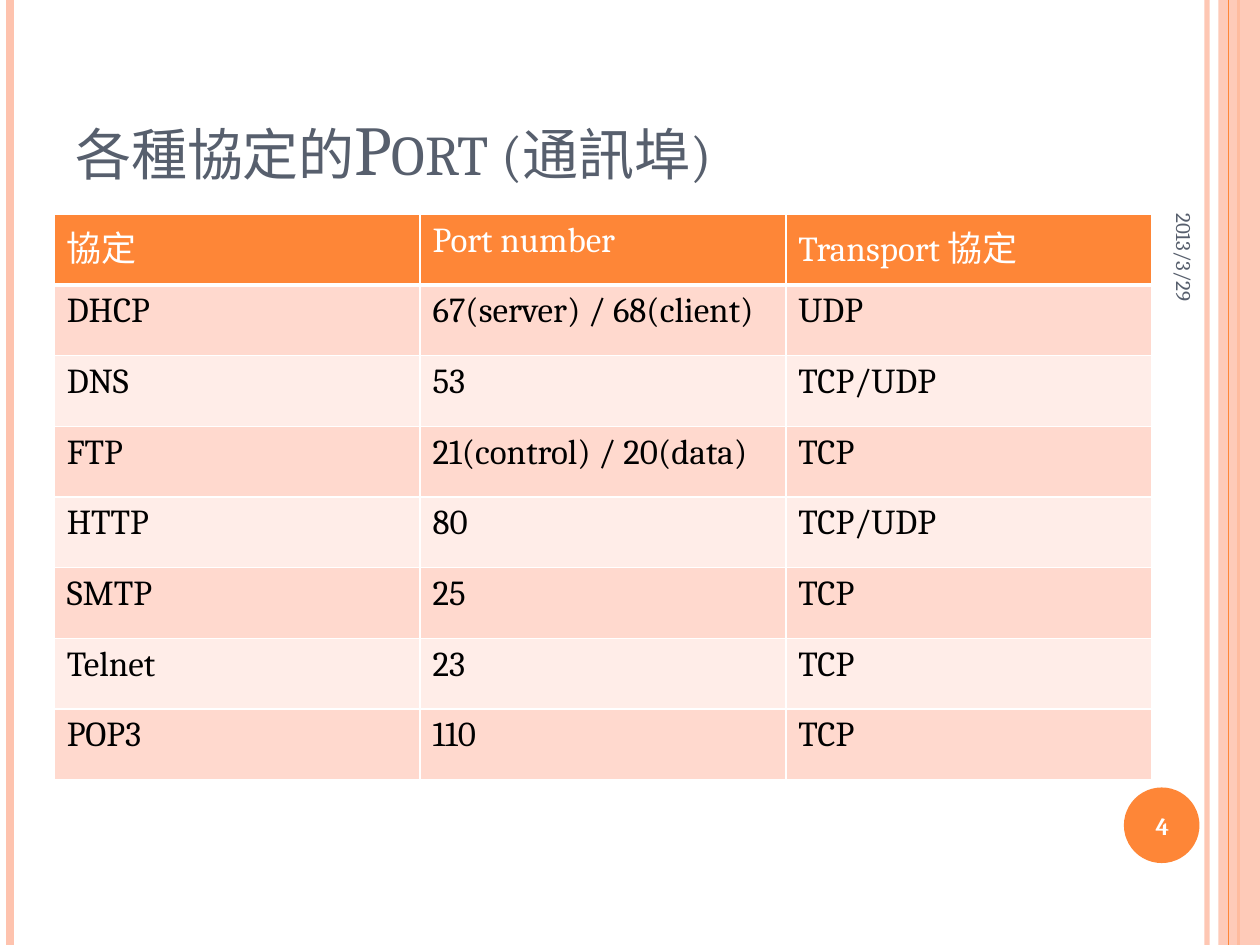
import pptx
import pptx.dml.color
import pptx.enum.shapes
import pptx.enum.text
import pptx.oxml.ns
import pptx.util
from lxml import etree

Inches = pptx.util.Inches
Pt = pptx.util.Pt
Align = pptx.enum.text.PP_ALIGN
Anchor = pptx.enum.text.MSO_ANCHOR
Shape = pptx.enum.shapes.MSO_SHAPE
qn = pptx.oxml.ns.qn


def color(value):
    return pptx.dml.color.RGBColor.from_string(value)


def add_alpha(element, percent):
    for entry in element.iter(qn("a:srgbClr")):
        etree.SubElement(entry, qn("a:alpha"), val=str(percent * 1000))


class SlideBuilder:
    font_name = "Cambria"
    orange = "FE8637"
    peach = "FEC3AE"
    slate = "575F6D"
    white = "FFFFFF"
    black = "000000"
    bands = ("FFD9CE", "FFEDE8")

    def __init__(self, deck):
        self.page = deck.slides.add_slide(deck.slide_layouts[6])

    def add_span(self, frame, text, size, ink, align=Align.LEFT, bold=False):
        para = frame.paragraphs[0]
        para.alignment = align
        span = para.add_run()
        span.text = text
        formats = {"name": self.font_name, "size": Pt(size), "bold": bold}
        for name, value in formats.items():
            setattr(span.font, name, value)
        span.font.color.rgb = color(ink)
        return span

    def rule(self, x, ink, width, alpha=None):
        line = self.page.shapes.add_connector(
            pptx.enum.shapes.MSO_CONNECTOR.STRAIGHT,
            Inches(x), Inches(0), Inches(x), Inches(7.5))
        line.line.color.rgb = color(ink)
        line.line.width = Pt(width)
        properties = line._element.spPr
        if alpha:
            add_alpha(properties, alpha)
        etree.SubElement(properties, qn("a:effectLst"))

    def shape(self, kind, bounds, ink, alpha=None):
        shape = self.page.shapes.add_shape(kind, *map(Inches, bounds))
        shape.shadow.inherit = False
        shape.fill.solid()
        shape.fill.fore_color.rgb = color(ink)
        shape.line.fill.background()
        if alpha:
            add_alpha(shape._element.spPr, alpha)

    def text(self, bounds, text, size, ink, anchor=Anchor.MIDDLE, rotation=0, **style):
        box = self.page.shapes.add_textbox(*map(Inches, bounds))
        box.rotation = rotation
        box.text_frame.word_wrap = True
        box.text_frame.vertical_anchor = anchor
        return self.add_span(box.text_frame, text, size, ink, **style)

    def border(self, cell, sides):
        properties = cell._tc.get_or_add_tcPr()
        for side, width in sides.items():
            edge = etree.SubElement(properties, qn(f"a:ln{side}"), w=str(Pt(width)))
            fill = etree.SubElement(edge, qn("a:solidFill"))
            etree.SubElement(fill, qn("a:srgbClr"), val=self.white)

    def table(self, bounds, rows):
        table = self.page.shapes.add_table(
            len(rows), len(rows[0]), *map(Inches, bounds)).table
        for row, values in enumerate(rows):
            header = row == 0
            sides = {"L": 1, "R": 1, "T": 3 if row == 1 else 1, "B": 3 if header else 1}
            for column, value in enumerate(values):
                cell = table.cell(row, column)
                self.border(cell, sides)
                cell.fill.solid()
                cell.fill.fore_color.rgb = color(
                    self.orange if header else self.bands[(row - 1) % 2])
                self.add_span(cell.text_frame, value, 20,
                              self.white if header else self.black)


def main():
    deck = pptx.Presentation()
    deck.slide_width = Inches(10)
    deck.slide_height = Inches(7.5)
    slide = SlideBuilder(deck)

    slide.rule(9.58, slide.peach, 3, alpha=93)
    slide.rule(0.08, slide.peach, 4.5)
    slide.rule(9.83, slide.orange, 1.5)
    slide.shape(Shape.RECTANGLE, (9.67, 0, 0.33, 7.5), slide.peach, alpha=87)
    slide.rule(9.75, slide.orange, 0.75)
    slide.shape(Shape.OVAL, (8.92, 6.25, 0.6, 0.6), slide.orange)

    title = slide.text((0.5, 0.3, 8.17, 1.25), "各種協定的Port (通訊埠)", 40,
                       slide.slate, anchor=Anchor.BOTTOM)
    title._r.get_or_add_rPr().set("cap", "small")

    slide.table((0.43, 1.7, 8.71, 4.49), [
        ("協定", "Port number", "Transport 協定"),
        ("DHCP", "67(server) / 68(client)", "UDP"),
        ("DNS", "53", "TCP/UDP"),
        ("FTP", "21(control) / 20(data)", "TCP"),
        ("HTTP", "80", "TCP/UDP"),
        ("SMTP", "25", "TCP"),
        ("Telnet", "23", "TCP"),
        ("POP3", "110", "TCP"),
    ])

    slide.text((8.3, 1.18, 2.2, 0.42), "2013/3/29", 12, slide.slate,
               rotation=90, align=Align.RIGHT)
    slide.text((8.89, 6.27, 0.67, 0.57), "4", 14, slide.white,
               align=Align.CENTER, bold=True)
    deck.save("out.pptx")


if __name__ == "__main__":
    main()
